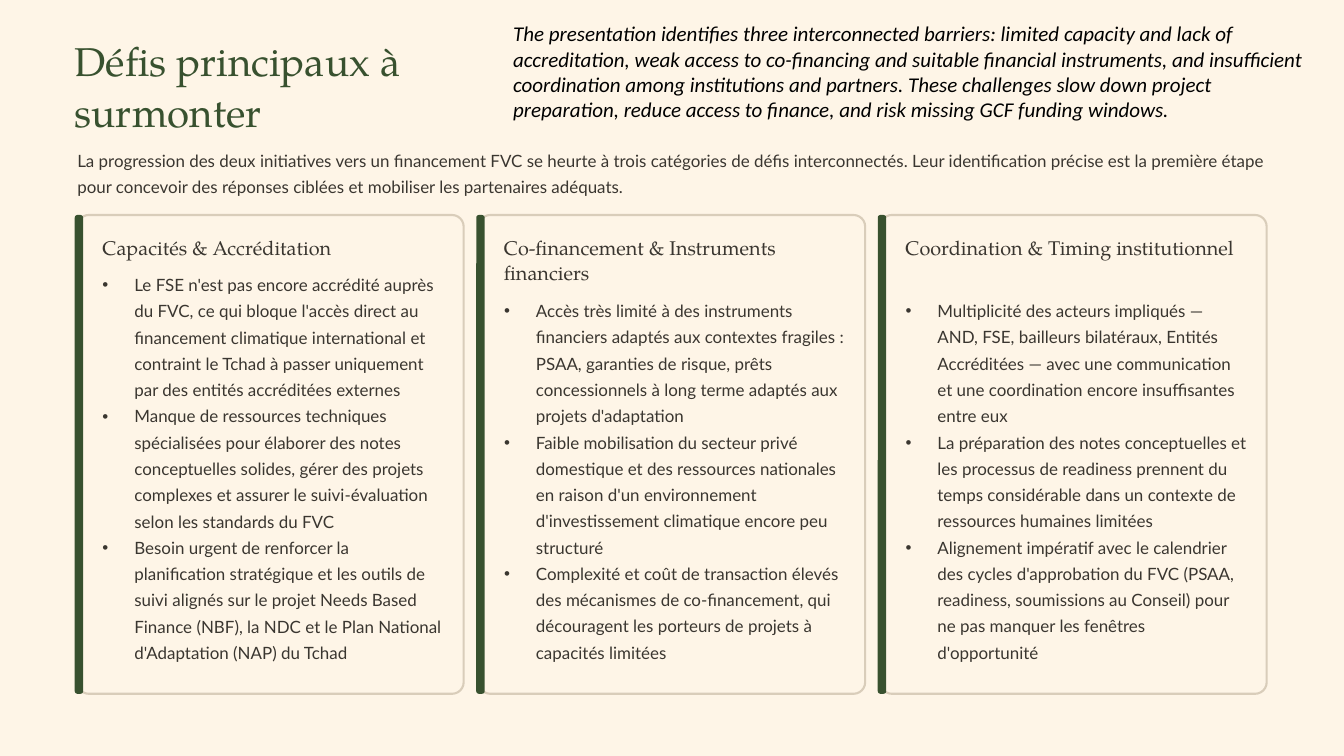
import pptx
import pptx.util
import pptx.dml.color
import pptx.enum.shapes
import pptx.enum.text
import lxml.etree

Inches = pptx.util.Inches
Pt = pptx.util.Pt
SERIF, SANS = "TeX Gyre Pagella", "Lato"
CREAM, GREEN, INK, EDGE = "FEF5E7", "38512F", "3A3630", "D9CDBA"

INTRO = "La progression des deux initiatives vers un financement FVC se heurte à trois catégories de défis interconnectés. Leur identification précise est la première étape pour concevoir des réponses ciblées et mobiliser les partenaires adéquats."
NOTE = "The presentation identifies three interconnected barriers: limited capacity and lack of accreditation, weak access to co-financing and suitable financial instruments, and insufficient coordination among institutions and partners. These challenges slow down project preparation, reduce access to finance, and risk missing GCF funding windows."
CARDS = [
    ("Capacités & Accréditation", 3.2, [
        "Le FSE n'est pas encore accrédité auprès du FVC, ce qui bloque l'accès direct au financement climatique international et contraint le Tchad à passer uniquement par des entités accréditées externes",
        "Manque de ressources techniques spécialisées pour élaborer des notes conceptuelles solides, gérer des projets complexes et assurer le suivi-évaluation selon les standards du FVC",
        "Besoin urgent de renforcer la planification stratégique et les outils de suivi alignés sur le projet Needs Based Finance (NBF), la NDC et le Plan National d'Adaptation (NAP) du Tchad"]),
    ("Co‑financement & Instruments financiers", 3.51, [
        "Accès très limité à des instruments financiers adaptés aux contextes fragiles : PSAA, garanties de risque, prêts concessionnels à long terme adaptés aux projets d'adaptation",
        "Faible mobilisation du secteur privé domestique et des ressources nationales en raison d'un environnement d'investissement climatique encore peu structuré",
        "Complexité et coût de transaction élevés des mécanismes de co-financement, qui découragent les porteurs de projets à capacités limitées"]),
    ("Coordination & Timing institutionnel", 3.51, [
        "Multiplicité des acteurs impliqués — AND, FSE, bailleurs bilatéraux, Entités Accréditées — avec une communication et une coordination encore insuffisantes entre eux",
        "La préparation des notes conceptuelles et les processus de readiness prennent du temps considérable dans un contexte de ressources humaines limitées",
        "Alignement impératif avec le calendrier des cycles d'approbation du FVC (PSAA, readiness, soumissions au Conseil) pour ne pas manquer les fenêtres d'opportunité"]),
]


def color(code):
    return pptx.dml.color.RGBColor.from_string(code)


class Deck:
    """Holds the style and the current slide, and draws each kind of element."""

    def __init__(self):
        self.file = pptx.Presentation()
        self.file.slide_width, self.file.slide_height = Inches(16), Inches(9)
        self.slide = self.file.slides.add_slide(self.file.slide_layouts[4])
        fill = self.slide.background.fill
        fill.solid()
        fill.fore_color.rgb = color(CREAM)
        self.shapes = self.slide.shapes
        self.slots = {s.placeholder_format.idx: s for s in self.slide.placeholders
                      if s.placeholder_format.idx < 5}

    def format(self, shape, lines, size, font, ink, lead=None, inset=0, bullet=False, italic=False):
        frame = shape.text_frame
        frame.text = "\n".join(lines)
        frame.word_wrap = True
        frame.auto_size = pptx.enum.text.MSO_AUTO_SIZE.NONE
        frame.vertical_anchor = pptx.enum.text.MSO_ANCHOR.TOP
        frame.margin_left = frame.margin_right = Inches(inset)
        frame.margin_top = frame.margin_bottom = Inches(inset / 2)
        for para in frame.paragraphs:
            para.alignment = pptx.enum.text.PP_ALIGN.LEFT
            para.space_before = Pt(0)
            if lead:
                para.line_spacing = Pt(lead)
            if bullet:
                self.bullet(para)
            for run in para.runs:
                run.font.name, run.font.size = font, Pt(size)
                run.font.bold, run.font.italic = False, italic
                run.font.color.rgb = color(ink)

    def bullet(self, para):
        props = para._p.get_or_add_pPr()
        props.set("marL", str(Inches(0.38)))
        props.set("indent", str(-Inches(0.38)))
        space = props.nsmap["a"]
        face = lxml.etree.SubElement(props, f"{{{space}}}buFont")
        face.set("typeface", "Arial")
        mark = lxml.etree.SubElement(props, f"{{{space}}}buChar")
        mark.set("char", "•")

    def slot(self, idx, box, lines, *style, **more):
        shape = self.slots[idx]
        self.shapes.element.append(shape.element)
        shape.left, shape.top, shape.width, shape.height = map(Inches, box)
        self.format(shape, lines, *style, **more)

    def text(self, box, line, *style, **more):
        shape = self.shapes.add_textbox(*map(Inches, box))
        self.format(shape, [line], *style, **more)

    def panel(self, box, bend, fill, edge=None):
        kind = pptx.enum.shapes.MSO_SHAPE.ROUNDED_RECTANGLE
        shape = self.shapes.add_shape(kind, *map(Inches, box))
        shape.adjustments[0] = bend
        shape.shadow.inherit = False
        shape.fill.solid()
        shape.fill.fore_color.rgb = color(fill)
        if edge:
            shape.line.color.rgb = color(edge)
            shape.line.width = Pt(1.8)
        else:
            shape.line.fill.background()

    def card(self, idx, left, head, top, items):
        self.panel((left + 0.03, 2.56, 4.6, 5.7), 0.03, CREAM, EDGE)
        self.panel((left, 2.56, 0.1, 5.7), 0.31, GREEN)
        self.text((left + 0.33, 2.79, 4.06, 0.61), head, 17, SERIF, INK, 21.5)
        self.slot(idx, (left + 0.33, top, 4.06, 4.52), items, 14.5, SANS, INK, 22.5, bullet=True)


def main():
    deck = Deck()
    deck.slot(0, (0.89, 0.4, 4.6, 1.21), ["Défis principaux à", "surmonter"], 34.5, SERIF, GREEN, 43.5)
    deck.slot(1, (0.92, 1.72, 14.17, 0.63), [INTRO], 14.5, SANS, INK, 22.5)
    for i, (head, top, items) in enumerate(CARDS):
        deck.card(i + 2, 0.89 + 4.78 * i, head, top, items)
    deck.text((6.01, 0.2, 9.74, 1.31), NOTE, 18, "Calibri", "000000", inset=0.1, italic=True)
    deck.file.save("out.pptx")


if __name__ == "__main__":
    main()
